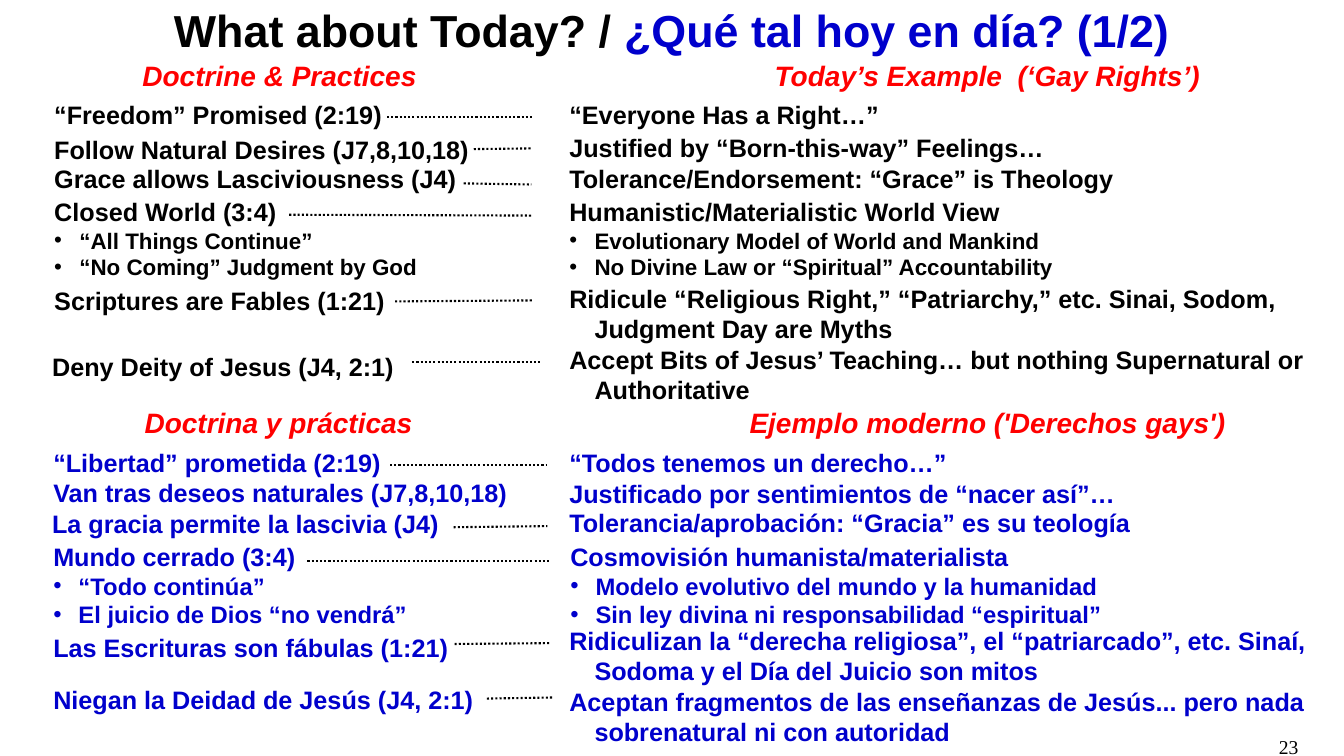
from dataclasses import dataclass

from lxml.etree import SubElement
from pptx import Presentation
from pptx.dml.color import RGBColor
from pptx.enum.dml import MSO_LINE
from pptx.enum.shapes import MSO_CONNECTOR
from pptx.enum.text import MSO_ANCHOR, MSO_AUTO_SIZE, PP_ALIGN
from pptx.oxml.ns import qn
from pptx.slide import Slide
from pptx.util import Pt

BLACK = RGBColor(0x00, 0x00, 0x00)
BLUE = RGBColor(0x00, 0x00, 0xCC)
RED = RGBColor(0xFF, 0x00, 0x00)
HANGING_INDENT = 18

BODY = {"name": "Arial", "size": Pt(18), "bold": True}
HEADING = {"name": "Arial", "size": Pt(20), "bold": True, "italic": True}
TITLE = {"name": "Arial", "size": Pt(32), "bold": True}
NUMBER = {"name": "Times New Roman", "size": Pt(14)}


@dataclass(frozen=True)
class Heading:
    text: str
    left: float
    top: float
    width: float


@dataclass(frozen=True)
class Entry:
    text: str
    left: float
    top: float
    width: float
    height: float
    spacing: float = 1.0
    bullets: tuple[str, ...] = ()


@dataclass(frozen=True)
class Leader:
    left: float
    start_y: float
    right: float
    end_y: float


@dataclass(frozen=True)
class Section:
    color: RGBColor
    bullet_size: float
    headings: tuple[Heading, ...]
    entries: tuple[Entry, ...]
    leaders: tuple[Leader, ...]


ENGLISH = Section(
    BLACK, 16,
    (Heading("Doctrine & Practices", 31.7, 36, 336),
     Heading("Today’s Example  (‘Gay Rights’)", 499, 36, 412.6)),
    (Entry("“Freedom” Promised (2:19)", 31.7, 65.5, 354, 54, 1.1),
     Entry("Follow Natural Desires (J7,8,10,18)", 31.7, 90, 360, 66, 1.1),
     Entry("Grace allows Lasciviousness (J4)", 31.7, 113, 354, 48),
     Entry("Closed World (3:4)", 31.7, 136.8, 354, 102, 1.0,
           ("“All Things Continue”", "“No Coming” Judgment by God")),
     Entry("Scriptures are Fables (1:21)", 31.7, 198, 354, 36, 1.1),
     Entry("Deny Deity of Jesus (J4, 2:1)", 30.2, 245.5, 354, 42, 1.1),
     Entry("“Everyone Has a Right…”", 399.6, 65.5, 420, 54, 1.1),
     Entry("Justified by “Born-this-way” Feelings…", 399.6, 88.5, 476.6, 66, 1.1),
     Entry("Tolerance/Endorsement: “Grace” is Theology", 399.6, 113, 535, 48),
     Entry("Humanistic/Materialistic World View", 399.6, 136.8, 512, 102, 1.0,
           ("Evolutionary Model of World and Mankind",
            "No Divine Law or “Spiritual” Accountability")),
     Entry("Ridicule “Religious Right,” “Patriarchy,” etc. Sinai, Sodom, "
           "Judgment Day are Myths", 399.6, 198.7, 560, 66),
     Entry("Accept Bits of Jesus’ Teaching… but nothing Supernatural or "
           "Authoritative", 399.6, 242.6, 560, 66)),
    (Leader(276.5, 83.5, 380, 83.5),
     Leader(338.4, 106.5, 379.5, 106),
     Leader(331.2, 131, 379.5, 131.8),
     Leader(206.6, 153.4, 380, 154),
     Leader(282.2, 215.3, 380, 214.6),
     Leader(294.5, 258.5, 386, 258.5)),
)

SPANISH = Section(
    BLUE, 17,
    (Heading("Doctrina y prácticas", 31, 283.7, 336),
     Heading("Ejemplo moderno ('Derechos gays')", 516.2, 283.7, 378.7)),
    (Entry("“Libertad” prometida (2:19)", 31, 314, 354, 54, 1.1),
     Entry("Van tras deseos naturales (J7,8,10,18)", 31, 335, 360, 66, 1.1),
     Entry("La gracia permite la lascivia (J4)", 30.2, 359.3, 354, 48),
     Entry("Mundo cerrado (3:4)", 31, 383, 354, 102, 1.0,
           ("“Todo continúa”", "El juicio de Dios “no vendrá”")),
     Entry("Las Escrituras son fábulas (1:21)", 31, 445.7, 354, 36, 1.1),
     Entry("Niegan la Deidad de Jesús (J4, 2:1)", 31, 483, 354, 42, 1.1),
     Entry("“Todos tenemos un derecho…”", 399.6, 313.5, 354, 54, 1.1),
     Entry("Justificado por sentimientos de “nacer así”…",
           399.6, 336, 468.7, 66, 1.1),
     Entry("Tolerancia/aprobación: “Gracia” es su teología",
           399.6, 358.6, 468.7, 48),
     Entry("Cosmovisión humanista/materialista", 400.3, 383, 446.4, 102, 1.0,
           ("Modelo evolutivo del mundo y la humanidad",
            "Sin ley divina ni responsabilidad “espiritual”")),
     Entry("Ridiculizan la “derecha religiosa”, el “patriarcado”, etc. Sinaí,\v"
           "Sodoma y el Día del Juicio son mitos", 399.6, 442.8, 560, 66),
     Entry("Aceptan fragmentos de las enseñanzas de Jesús... pero nada "
           "sobrenatural ni con autoridad", 399.6, 486.7, 560, 66)),
    (Leader(278.6, 332, 391, 332),
     Leader(324, 376.6, 391, 375.8),
     Leader(219.6, 401, 393, 401),
     Leader(324.7, 460, 393, 459.4),
     Leader(347.8, 499, 395.3, 498.2)),
)


def format_font(font, values: dict, color: RGBColor) -> None:
    for name, value in values.items():
        setattr(font, name, value)
    font.color.rgb = color


def add_text_box(page: Slide, left: float, top: float, width: float, height: float):
    box = page.shapes.add_textbox(Pt(left), Pt(top), Pt(width), Pt(height))
    box.text_frame.word_wrap = True
    return box.text_frame


def add_line_of_text(page: Slide, heading: Heading, height: float, values: dict,
                     color: RGBColor, alignment: PP_ALIGN, spacing: float) -> None:
    frame = add_text_box(page, heading.left, heading.top, heading.width, height)
    para = frame.paragraphs[0]
    para.text = heading.text
    para.alignment = alignment
    para.line_spacing = spacing
    format_font(para.runs[0].font, values, color)


def add_entry(page: Slide, entry: Entry, section: Section) -> None:
    frame = add_text_box(page, entry.left, entry.top, entry.width, entry.height)
    for index, text in enumerate((entry.text, *entry.bullets)):
        para = frame.add_paragraph() if index else frame.paragraphs[0]
        para.text = text
        para.line_spacing = entry.spacing
        properties = para._p.get_or_add_pPr()
        properties.set("marL", str(Pt(HANGING_INDENT)))
        properties.set("indent", str(-Pt(HANGING_INDENT)))
        if index:
            SubElement(properties, qn("a:buFont")).set("typeface", "Arial")
            SubElement(properties, qn("a:buChar")).set("char", "•")
        size = {"size": Pt(section.bullet_size)} if index else {}
        for span in para.runs:
            format_font(span.font, BODY | size, section.color)


def add_leader(page: Slide, leader: Leader) -> None:
    line = page.shapes.add_connector(
        MSO_CONNECTOR.STRAIGHT, Pt(leader.left), Pt(leader.start_y),
        Pt(leader.right), Pt(leader.end_y))
    line.line.color.rgb = BLACK
    line.line.width = Pt(1.5)
    line.line.dash_style = MSO_LINE.ROUND_DOT
    SubElement(line._element.spPr, qn("a:effectLst"))


def add_title(page: Slide) -> None:
    title = page.shapes.title
    title.left, title.top, title.width, title.height = Pt(0), Pt(0), Pt(960), Pt(42)
    frame = title.text_frame
    frame.auto_size = MSO_AUTO_SIZE.NONE
    frame.vertical_anchor = MSO_ANCHOR.MIDDLE
    para = frame.paragraphs[0]
    para.alignment = PP_ALIGN.CENTER
    for text, color in (("What about Today? / ", BLACK),
                        ("¿Qué tal hoy en día? (1/2)", BLUE)):
        span = para.add_run()
        span.text = text
        format_font(span.font, TITLE, color)


def main() -> None:
    deck = Presentation()
    deck.slide_width, deck.slide_height = Pt(960), Pt(540)
    page = deck.slides.add_slide(deck.slide_layouts[5])
    add_title(page)

    # English and Spanish comparisons
    for section in (ENGLISH, SPANISH):
        for heading in section.headings:
            add_line_of_text(page, heading, 36, HEADING, RED, PP_ALIGN.CENTER, 1.1)
        for entry in section.entries:
            add_entry(page, entry, section)
        for leader in section.leaders:
            add_leader(page, leader)

    # Slide number
    add_line_of_text(page, Heading("23", 630.7, 521.3, 303.8), 18, NUMBER, BLACK,
                     PP_ALIGN.RIGHT, 1.0)
    deck.save("out.pptx")


if __name__ == "__main__":
    main()
